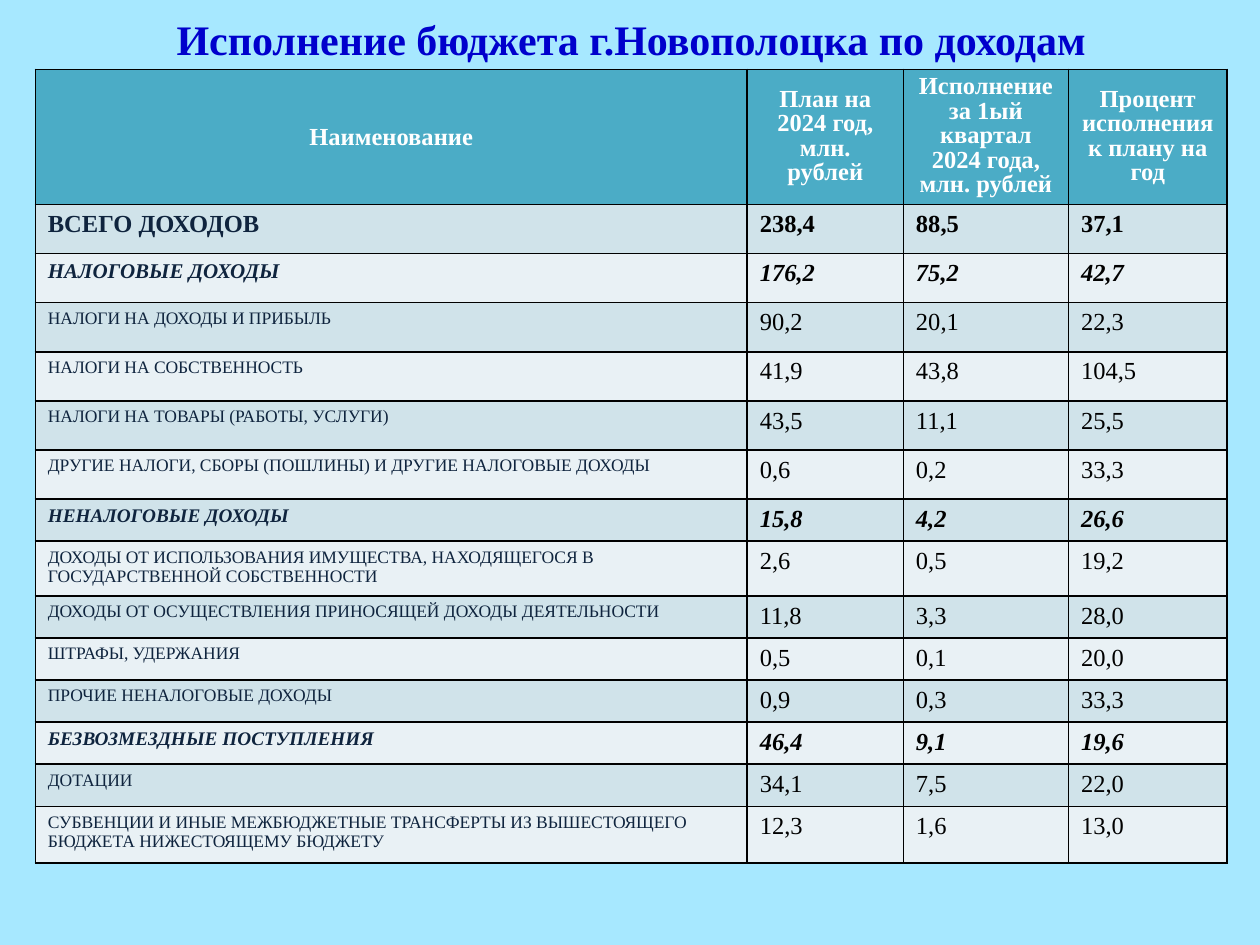
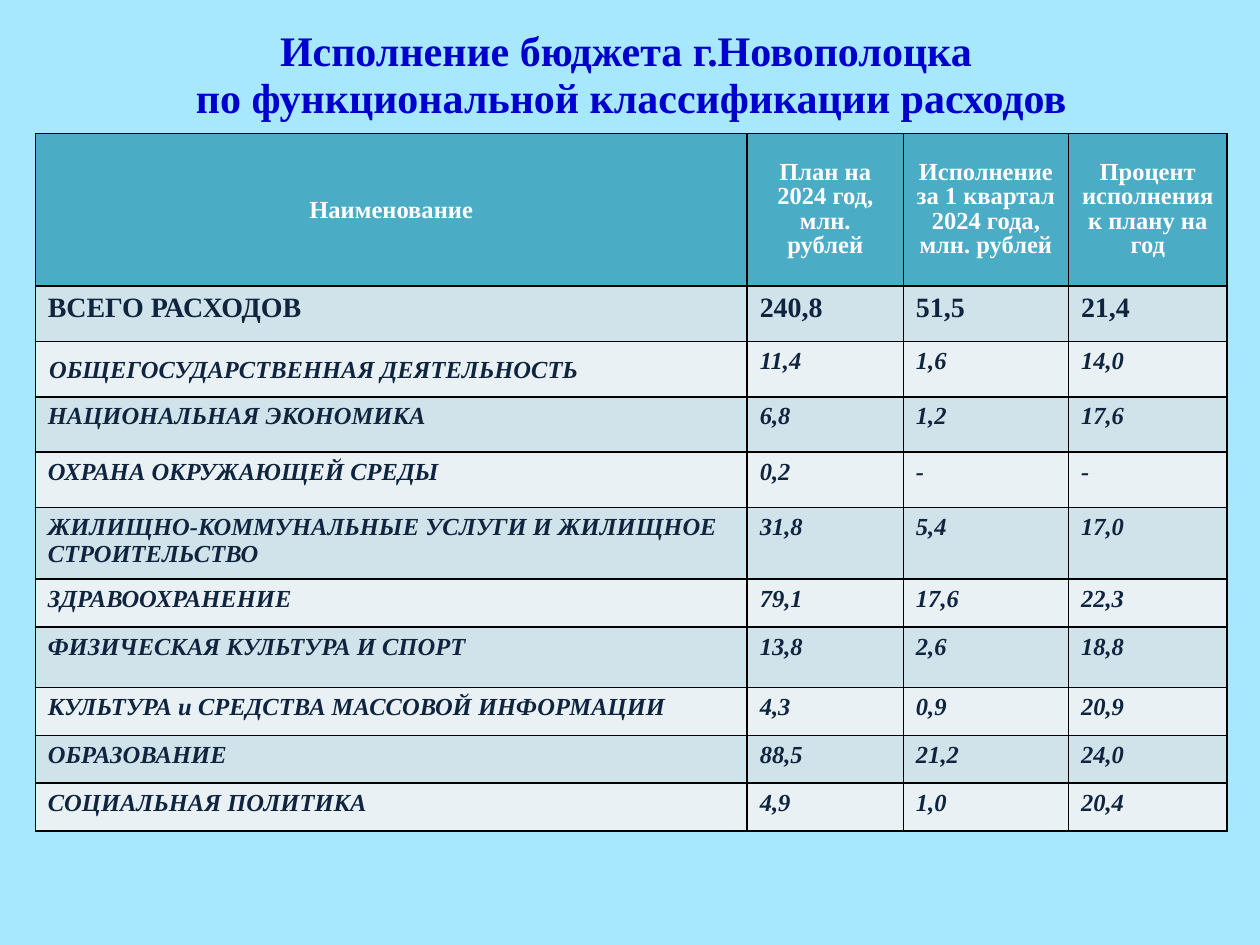
"""Builds two slides with tables on the execution of a city budget."""
from dataclasses import dataclass
from typing import Any, NamedTuple

from lxml import etree
from pptx import Presentation
from pptx import util as u
from pptx.dml.color import RGBColor
from pptx.enum import text as t
from pptx.oxml import ns

COLORS = {
    "sky": "A7E8FF",
    "title": "0000CC",
    "header": "4BACC6",
    "odd_band": "D0E3EA",
    "even_band": "E9F1F5",
    "navy": "0F243E",
    "black": "000000",
    "white": "FFFFFF",
}
FONT = "Times New Roman"
TABLE_LEFT = 0.28
COLUMN_WIDTHS = (5.65, 1.24, 1.31, 1.26)
BORDER_SIDES = ("lnL", "lnR", "lnT", "lnB")
INDENTED = {
    "margin_left": u.Inches(0.11),
    "margin_right": u.Inches(0.01),
    "margin_top": u.Inches(0.01),
    "margin_bottom": u.Inches(0),
    "vertical_anchor": t.MSO_ANCHOR.MIDDLE,
}


class Style(NamedTuple):
    label_size: int
    figure_size: int = 14
    bold: bool = True
    italic: bool = True


INCOME_TOTAL = Style(14, italic=False)
TAX_GROUP = Style(12)
OTHER_GROUP = Style(11)
INCOME_ITEM = Style(10, bold=False, italic=False)
SPENDING_TOTAL = Style(16, 16, italic=False)
SPENDING_ITEM = Style(14)


@dataclass
class BudgetLine:
    label: str
    figures: tuple[str, str, str]
    height: float
    style: Style
    indented: bool = False


@dataclass
class BudgetPage:
    title: str
    title_top: float
    title_height: float
    title_spacing: int
    table_top: float
    header_height: float
    period: str
    figure_color: str
    lines: list[BudgetLine]


INCOME = BudgetPage(
    "Исполнение бюджета г.Новополоцка по доходам",
    0.04, 0.32, 44, 0.55, 1.04, "1ый квартал", "black",
    [
        BudgetLine("ВСЕГО ДОХОДОВ", ("238,4", "88,5", "37,1"), 0.39, INCOME_TOTAL),
        BudgetLine("НАЛОГОВЫЕ ДОХОДЫ", ("176,2", "75,2", "42,7"), 0.39, TAX_GROUP),
        BudgetLine("НАЛОГИ НА ДОХОДЫ И ПРИБЫЛЬ", ("90,2", "20,1", "22,3"), 0.39, INCOME_ITEM),
        BudgetLine("НАЛОГИ НА СОБСТВЕННОСТЬ", ("41,9", "43,8", "104,5"), 0.39, INCOME_ITEM),
        BudgetLine("НАЛОГИ НА ТОВАРЫ (РАБОТЫ, УСЛУГИ)", ("43,5", "11,1", "25,5"), 0.39, INCOME_ITEM),
        BudgetLine("ДРУГИЕ НАЛОГИ, СБОРЫ (ПОШЛИНЫ) И ДРУГИЕ НАЛОГОВЫЕ ДОХОДЫ",
                   ("0,6", "0,2", "33,3"), 0.39, INCOME_ITEM),
        BudgetLine("НЕНАЛОГОВЫЕ ДОХОДЫ", ("15,8", "4,2", "26,6"), 0.32, OTHER_GROUP),
        BudgetLine("ДОХОДЫ ОТ ИСПОЛЬЗОВАНИЯ ИМУЩЕСТВА, НАХОДЯЩЕГОСЯ В ГОСУДАРСТВЕННОЙ СОБСТВЕННОСТИ",
                   ("2,6", "0,5", "19,2"), 0.42, INCOME_ITEM),
        BudgetLine("ДОХОДЫ ОТ ОСУЩЕСТВЛЕНИЯ ПРИНОСЯЩЕЙ ДОХОДЫ ДЕЯТЕЛЬНОСТИ",
                   ("11,8", "3,3", "28,0"), 0.32, INCOME_ITEM),
        BudgetLine("ШТРАФЫ, УДЕРЖАНИЯ", ("0,5", "0,1", "20,0"), 0.32, INCOME_ITEM),
        BudgetLine("ПРОЧИЕ НЕНАЛОГОВЫЕ ДОХОДЫ", ("0,9", "0,3", "33,3"), 0.32, INCOME_ITEM),
        BudgetLine("БЕЗВОЗМЕЗДНЫЕ ПОСТУПЛЕНИЯ", ("46,4", "9,1", "19,6"), 0.32, OTHER_GROUP),
        BudgetLine("ДОТАЦИИ", ("34,1", "7,5", "22,0"), 0.32, INCOME_ITEM),
        BudgetLine("СУБВЕНЦИИ И ИНЫЕ МЕЖБЮДЖЕТНЫЕ ТРАНСФЕРТЫ ИЗ ВЫШЕСТОЯЩЕГО БЮДЖЕТА НИЖЕСТОЯЩЕМУ БЮДЖЕТУ",
                   ("12,3", "1,6", "13,0"), 0.45, INCOME_ITEM),
    ],
)

SPENDING = BudgetPage(
    "Исполнение бюджета г.Новополоцка \vпо функциональной классификации расходов",
    0.13, 0.93, 27, 1.06, 1.21, "1 квартал", "navy",
    [
        BudgetLine("ВСЕГО РАСХОДОВ", ("240,8", "51,5", "21,4"), 0.44, SPENDING_TOTAL),
        BudgetLine("ОБЩЕГОСУДАРСТВЕННАЯ ДЕЯТЕЛЬНОСТЬ", ("11,4", "1,6", "14,0"), 0.44, SPENDING_ITEM, True),
        BudgetLine("НАЦИОНАЛЬНАЯ ЭКОНОМИКА", ("6,8", "1,2", "17,6"), 0.44, SPENDING_ITEM),
        BudgetLine("ОХРАНА ОКРУЖАЮЩЕЙ СРЕДЫ", ("0,2", "-", "-"), 0.44, SPENDING_ITEM),
        BudgetLine("ЖИЛИЩНО-КОММУНАЛЬНЫЕ УСЛУГИ И ЖИЛИЩНОЕ СТРОИТЕЛЬСТВО",
                   ("31,8", "5,4", "17,0"), 0.44, SPENDING_ITEM),
        BudgetLine("ЗДРАВООХРАНЕНИЕ", ("79,1", "17,6", "22,3"), 0.38, SPENDING_ITEM),
        BudgetLine("ФИЗИЧЕСКАЯ КУЛЬТУРА И СПОРТ", ("13,8", "2,6", "18,8"), 0.48, SPENDING_ITEM),
        BudgetLine("КУЛЬТУРА и СРЕДСТВА МАССОВОЙ ИНФОРМАЦИИ", ("4,3", "0,9", "20,9"), 0.38, SPENDING_ITEM),
        BudgetLine("ОБРАЗОВАНИЕ", ("88,5", "21,2", "24,0"), 0.38, SPENDING_ITEM),
        BudgetLine("СОЦИАЛЬНАЯ ПОЛИТИКА", ("4,9", "1,0", "20,4"), 0.38, SPENDING_ITEM),
    ],
)


def rgb(color: str) -> RGBColor:
    return RGBColor.from_string(COLORS[color])


def apply(target: Any, values: dict[str, Any]) -> None:
    for attribute, value in values.items():
        setattr(target, attribute, value)


def write(frame: Any, words: str, size: int, color: str, bold: bool = True,
          italic: bool = False, **paragraph_format: Any) -> None:
    frame.text = words
    paragraph = frame.paragraphs[0]
    apply(paragraph, paragraph_format)
    for run in paragraph.runs:
        apply(run.font, {"name": FONT, "size": u.Pt(size), "bold": bold, "italic": italic})
        run.font.color.rgb = rgb(color)


def paint(cell: Any, color: str) -> None:
    properties = cell._tc.get_or_add_tcPr()
    for side in BORDER_SIDES:
        border = etree.SubElement(properties, ns.qn(f"a:{side}"), w=str(u.Pt(1)))
        fill = etree.SubElement(border, ns.qn("a:solidFill"))
        etree.SubElement(fill, ns.qn("a:srgbClr"), val=COLORS["black"])
    cell.fill.solid()
    cell.fill.fore_color.rgb = rgb(color)


def add_title(slide: Any, page: BudgetPage) -> None:
    title = slide.shapes.add_textbox(
        u.Inches(0.51), u.Inches(page.title_top), u.Inches(9), u.Inches(page.title_height))
    apply(title.text_frame, {"word_wrap": True, "vertical_anchor": t.MSO_ANCHOR.MIDDLE})
    write(title.text_frame, page.title, 24, "title",
          alignment=t.PP_ALIGN.CENTER, line_spacing=u.Pt(page.title_spacing))


def add_header(table: Any, period: str) -> None:
    headings = (
        "Наименование",
        "План на 2024 год, млн. рублей",
        f"Исполнение за {period} 2024 года, млн. рублей",
        "Процент исполнения к плану на год",
    )
    for column, heading in enumerate(headings):
        cell = table.cell(0, column)
        cell.vertical_anchor = t.MSO_ANCHOR.MIDDLE
        write(cell.text_frame, heading, 14, "white", alignment=t.PP_ALIGN.CENTER,
              line_spacing=u.Pt(14) if column else None)
        paint(cell, "header")


def add_budget_line(table: Any, row: int, line: BudgetLine, figure_color: str) -> None:
    style = line.style
    for column, words in enumerate((line.label, *line.figures)):
        cell = table.cell(row, column)
        size, color = (style.figure_size, figure_color) if column else (style.label_size, "navy")
        write(cell.text_frame, words, size, color, style.bold, style.italic)
        paint(cell, "odd_band" if row % 2 else "even_band")
    if line.indented:
        apply(table.cell(row, 0), INDENTED)


def add_budget_table(slide: Any, page: BudgetPage) -> None:
    heights = [page.header_height, *(line.height for line in page.lines)]
    table = slide.shapes.add_table(
        len(heights), len(COLUMN_WIDTHS), u.Inches(TABLE_LEFT), u.Inches(page.table_top),
        u.Inches(sum(COLUMN_WIDTHS)), u.Inches(sum(heights))).table
    for column, width in zip(table.columns, COLUMN_WIDTHS):
        column.width = u.Inches(width)
    for row, height in zip(table.rows, heights):
        row.height = u.Inches(height)
    add_header(table, page.period)
    for row, line in enumerate(page.lines, start=1):
        add_budget_line(table, row, line, page.figure_color)


def main() -> None:
    deck = Presentation()
    apply(deck, {"slide_width": u.Inches(10), "slide_height": u.Inches(7.5)})
    for page in (INCOME, SPENDING):
        slide = deck.slides.add_slide(deck.slide_layouts[6])
        slide.background.fill.solid()
        slide.background.fill.fore_color.rgb = rgb("sky")
        add_title(slide, page)
        add_budget_table(slide, page)
    deck.save("out.pptx")


if __name__ == "__main__":
    main()
